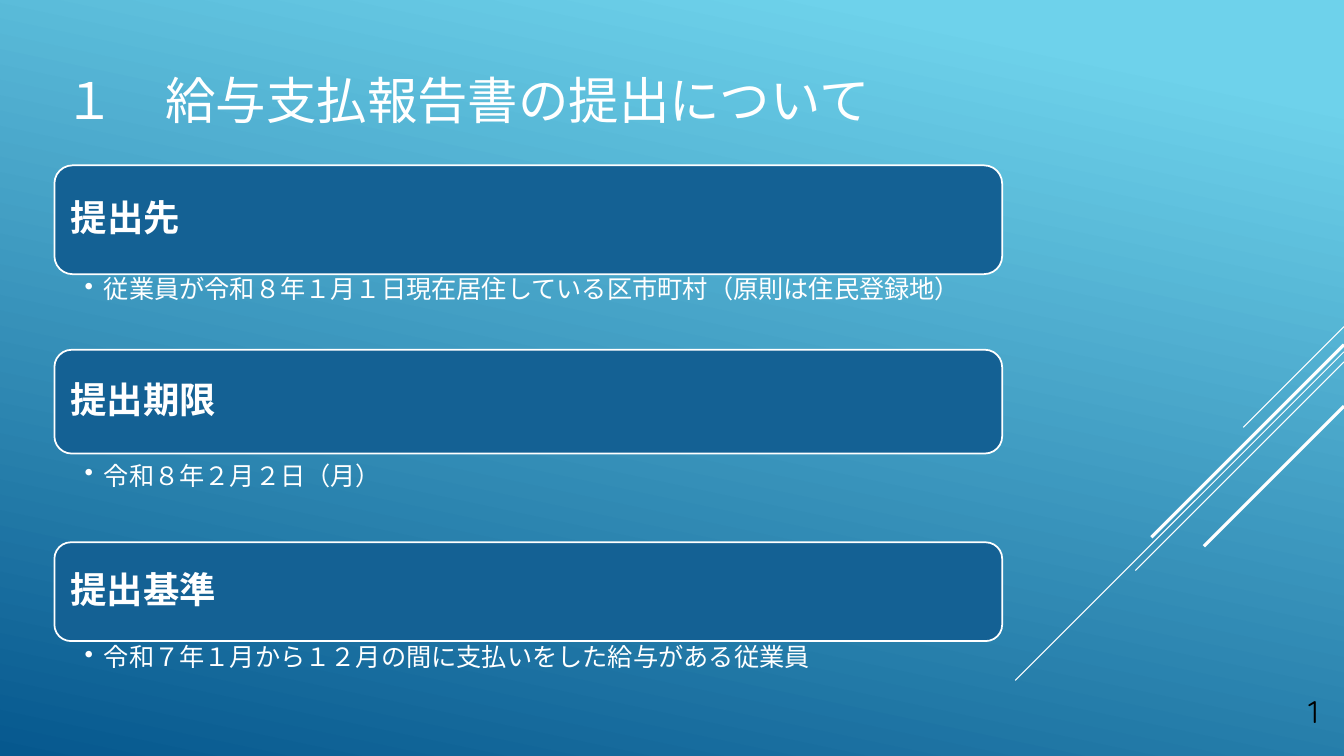
from pptx import Presentation
from pptx.dml.color import RGBColor
from pptx.enum.lang import MSO_LANGUAGE_ID as LANG
from pptx.enum.shapes import MSO_CONNECTOR as CONN, MSO_SHAPE as SHAPE
from pptx.enum.text import MSO_ANCHOR as ANCHOR, MSO_AUTO_SIZE as AUTO, PP_ALIGN as ALIGN
from pptx.oxml.ns import qn
from pptx.oxml.xmlchemy import OxmlElement
from pptx.util import Inches, Pt

WHITE = RGBColor(0xFF, 0xFF, 0xFF)
BLACK = RGBColor(0, 0, 0)
PANEL = RGBColor(0x14, 0x61, 0x94)
SKY = RGBColor(0x6E, 0xD2, 0xEB)
DEEP = RGBColor(0x06, 0x58, 0x8E)
FONT = "Quicksand"
SLIDE_W, SLIDE_H = 13.33, 7.5
LEFT, WIDTH = 0.54, 9.4

# Heading, bar top, bar height, detail top, detail
SECTIONS = [
    ("提出先", 1.64, 1.08, 2.72,
     "従業員が令和８年１月１日現在居住している区市町村（原則は住民登録地）"),
    ("提出期限", 3.47, 1.03, 4.57, "令和８年２月２日（月）"),
    ("提出基準", 5.38, 0.98, 6.37,
     "令和７年１月から１２月の間に支払いをした給与がある従業員"),
]
# Diagonals from the right edge: start height, run to the left, weight
DIAGONALS = [(3.24, 1.0, 0.75), (3.49, 3.26, 0.75), (3.59, 2.07, 0.75),
             (3.42, 1.91, 2.25), (4.03, 1.39, 2.25)]


def style_font(font, size, color=WHITE, bold=False):
    font.name, font.size, font.bold = FONT, Pt(size), bold
    font.color.rgb = color


def add_run(p, text, size, bold=False):
    r = p.add_run()
    r.text = text
    style_font(r.font, size, bold=bold)
    r.font.language_id = LANG.JAPANESE


def set_frame(tf, anchor, left, top, right, bottom):
    tf.word_wrap = True
    tf.auto_size = AUTO.NONE
    tf.vertical_anchor = anchor
    tf.margin_left, tf.margin_top = Inches(left), Inches(top)
    tf.margin_right, tf.margin_bottom = Inches(right), Inches(bottom)


def paint_background(slide):
    fill = slide.background.fill
    fill.gradient()
    fill.gradient_angle = 258
    for stop, color, position in zip(fill.gradient_stops, (SKY, DEEP), (0.1, 1)):
        stop.color.rgb = color
        stop.position = position


def add_diagonals(slide, right):
    for top, run, weight in DIAGONALS:
        line = slide.shapes.add_connector(
            CONN.STRAIGHT, Inches(right), Inches(top),
            Inches(right - run), Inches(top + run))
        line.line.color.rgb = WHITE
        line.line.width = Pt(weight)
        line._element.spPr.append(OxmlElement("a:effectLst"))


def set_title(slide, x, y, w, h, text):
    title = slide.shapes.title
    title.left, title.top = Inches(x), Inches(y)
    title.width, title.height = Inches(w), Inches(h)
    tf = title.text_frame
    set_frame(tf, ANCHOR.MIDDLE, 0.1, 0.05, 0.1, 0.05)
    p = tf.paragraphs[0]
    p.alignment = ALIGN.LEFT
    add_run(p, text, 36)


def add_heading_bar(slide, x, y, w, h, text):
    bar = slide.shapes.add_shape(
        SHAPE.ROUNDED_RECTANGLE, Inches(x), Inches(y), Inches(w), Inches(h))
    bar.shadow.inherit = False
    bar.fill.solid()
    bar.fill.fore_color.rgb = PANEL
    bar.line.color.rgb = WHITE
    bar.line.width = Pt(1.25)
    set_frame(bar.text_frame, ANCHOR.MIDDLE, 0.11, 0.11, 0.11, 0.11)
    p = bar.text_frame.paragraphs[0]
    p.alignment = ALIGN.LEFT
    p.line_spacing = 0.9
    p.space_after = Pt(9)
    add_run(p, text, 26, bold=True)


def add_detail(slide, x, y, w, h, text):
    box = slide.shapes.add_textbox(Inches(x), Inches(y), Inches(w), Inches(h))
    set_frame(box.text_frame, ANCHOR.TOP, 0.3, 0.03, 0.14, 0.03)
    p = box.text_frame.paragraphs[0]
    p.line_spacing = 0.9
    add_run(p, text, 18)
    # Hanging bullet
    pPr = p._p.get_or_add_pPr()
    pPr.set("marL", str(Inches(0.19)))
    pPr.set("indent", str(-Inches(0.19)))
    bullet = OxmlElement("a:buChar")
    bullet.set("char", "•")
    pPr.append(bullet)


def add_section(slide, x, w, section):
    heading, bar_top, bar_height, detail_top, detail = section
    add_heading_bar(slide, x, bar_top, w, bar_height, heading)
    add_detail(slide, x, detail_top, w, 0.81, detail)


def add_slide_number(slide, x, y, w, h):
    box = slide.shapes.add_textbox(Inches(x), Inches(y), Inches(w), Inches(h))
    set_frame(box.text_frame, ANCHOR.BOTTOM, 0.1, 0.05, 0.1, 0.05)
    p = box.text_frame.paragraphs[0]
    p.alignment = ALIGN.RIGHT
    r = p.add_run()
    r.text = "1"
    style_font(r.font, 22.4, BLACK)
    # Turn the run into a slide number field
    field = OxmlElement("a:fld")
    field.set("id", "{B6F15528-21DE-4FAA-801E-634DDDAF4B2B}")
    field.set("type", "slidenum")
    for part in (r._r.find(qn("a:rPr")), r._r.find(qn("a:t"))):
        field.append(part)
    p._p.replace(r._r, field)


def main():
    prs = Presentation()
    prs.slide_width, prs.slide_height = Inches(SLIDE_W), Inches(SLIDE_H)
    slide = prs.slides.add_slide(prs.slide_layouts[5])
    paint_background(slide)
    add_diagonals(slide, SLIDE_W)
    set_title(slide, LEFT, 0.6, WIDTH, 0.78, "１　給与支払報告書の提出について")
    for section in SECTIONS:
        add_section(slide, LEFT, WIDTH, section)
    add_slide_number(slide, 12.43, 6.89, 0.75, 0.4)
    prs.save("out.pptx")


if __name__ == "__main__":
    main()
